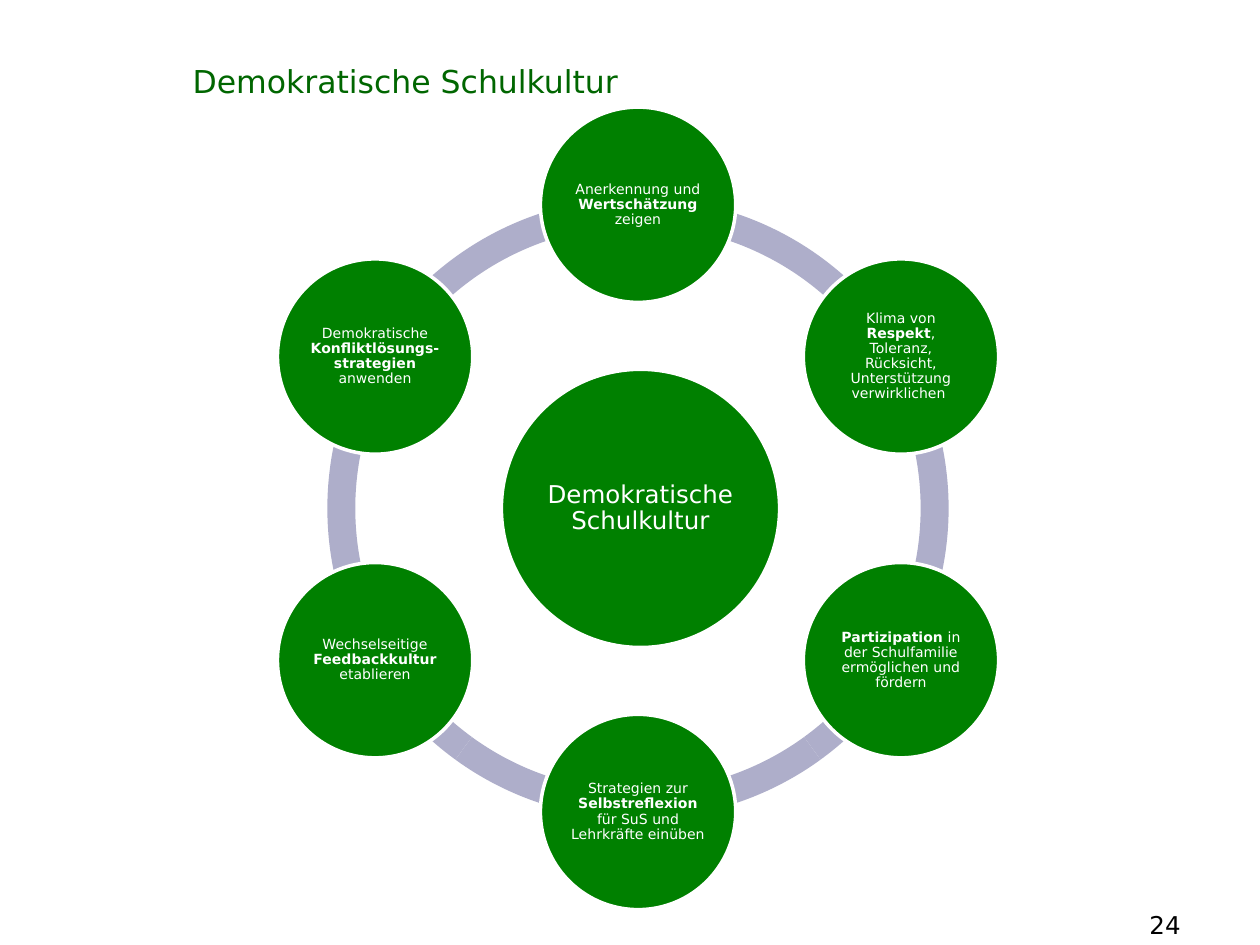
from dataclasses import dataclass
from math import cos, radians, sin

from pptx import Presentation
from pptx.dml.color import RGBColor
from pptx.enum.shapes import MSO_SHAPE
from pptx.enum.text import MSO_ANCHOR, PP_ALIGN
from pptx.util import Pt


@dataclass(frozen=True)
class Theme:
    font: str = "DejaVu Sans"
    green: RGBColor = RGBColor(0x00, 0x80, 0x00)
    title_green: RGBColor = RGBColor(0x00, 0x66, 0x00)
    lavender: RGBColor = RGBColor(0xAE, 0xAE, 0xCA)
    white: RGBColor = RGBColor(0xFF, 0xFF, 0xFF)
    black: RGBColor = RGBColor(0x00, 0x00, 0x00)
    title: int = 18
    hub: int = 14
    node: int = 8
    number: int = 14


class Deck:
    def __init__(self, theme, width, height):
        self.theme = theme
        self.prs = Presentation()
        self.prs.slide_width, self.prs.slide_height = Pt(width), Pt(height)
        self.s = self.prs.slides.add_slide(self.prs.slide_layouts[6])

    def style(self, p, size, color, align):
        p.alignment = align
        p.font.name = self.theme.font
        p.font.size = Pt(size)
        p.font.color.rgb = color

    def text(self, x, y, w, h, text, size, color, align=PP_ALIGN.LEFT):
        tf = self.s.shapes.add_textbox(Pt(x), Pt(y), Pt(w), Pt(h)).text_frame
        tf.word_wrap = True
        p = tf.paragraphs[0]
        p.add_run().text = text
        self.style(p, size, color, align)

    def round_shape(self, kind, cx, cy, diameter, fill):
        left, top = cx - diameter / 2, cy - diameter / 2
        sp = self.s.shapes.add_shape(kind, Pt(left), Pt(top), Pt(diameter), Pt(diameter))
        sp.shadow.inherit = False
        sp.fill.solid()
        sp.fill.fore_color.rgb = fill
        return sp

    def arc(self, cx, cy, diameter, start, end, thickness):
        sp = self.round_shape(MSO_SHAPE.BLOCK_ARC, cx, cy, diameter, self.theme.lavender)
        sp.line.fill.background()
        # Angles are stored in 60000ths of a degree, adjustments in 100000ths
        for i, value in enumerate((start * 0.6, end * 0.6, thickness)):
            sp.adjustments[i] = value

    def circle(self, cx, cy, diameter, runs, size, inset):
        """Runs at odd positions are bold."""
        sp = self.round_shape(MSO_SHAPE.OVAL, cx, cy, diameter, self.theme.green)
        sp.line.color.rgb = self.theme.white
        sp.line.width = Pt(2)
        tf = sp.text_frame
        tf.word_wrap = True
        tf.vertical_anchor = MSO_ANCHOR.MIDDLE
        tf.margin_left = tf.margin_right = tf.margin_top = tf.margin_bottom = Pt(inset)
        p = tf.paragraphs[0]
        p.line_spacing = 0.9
        p.space_after = Pt(round(size * 0.35, 1))
        for i, text in enumerate(runs):
            if text:
                r = p.add_run()
                r.text = text
                r.font.bold = i % 2 == 1
        self.style(p, size, self.theme.white, PP_ALIGN.CENTER)


# Clockwise from the top
NODES = [
    ("Anerkennung und ", "Wertschätzung ", "zeigen"),
    ("Klima von ", "Respekt", ", Toleranz, Rücksicht, Unterstützung verwirklichen "),
    ("", "Partizipation", " in der Schulfamilie ermöglichen und fördern"),
    ("Strategien zur ", "Selbstreflexion ", "für SuS und Lehrkräfte einüben"),
    ("Wechselseitige ", "Feedbackkultur ", "etablieren"),
    ("Demokratische ", "Konfliktlösungs-strategien ", "anwenden"),
]
TITLE = "Demokratische Schulkultur"
CX, CY = 364.6, 290.5
ORBIT = 173.5


def main():
    theme = Theme()
    deck = Deck(theme, 720, 540)

    # Ring: five short arcs below, one half circle above
    arcs = [(a, a + 36) for a in (126, 90, 54, 18)] + [(198, 18), (162, 198)]
    for start, end in arcs:
        deck.arc(CX, CY, 355, start, end, 0.045)

    # Hub and the nodes around it
    deck.circle(CX + 1.4, CY, 159, [TITLE], theme.hub, 1.4)
    for i, runs in enumerate(NODES):
        angle = radians(360 / len(NODES) * i - 90)
        deck.circle(CX + ORBIT * cos(angle), CY + ORBIT * sin(angle), 111.6,
                    runs, theme.node, 0.8)

    # Slide number and title
    deck.text(518.4, 516.2, 163.4, 37.4, "24", theme.number, theme.black, PP_ALIGN.RIGHT)
    deck.text(103, 31.7, 391.7, 23, TITLE, theme.title, theme.title_green)

    deck.prs.save("out.pptx")


if __name__ == "__main__":
    main()
